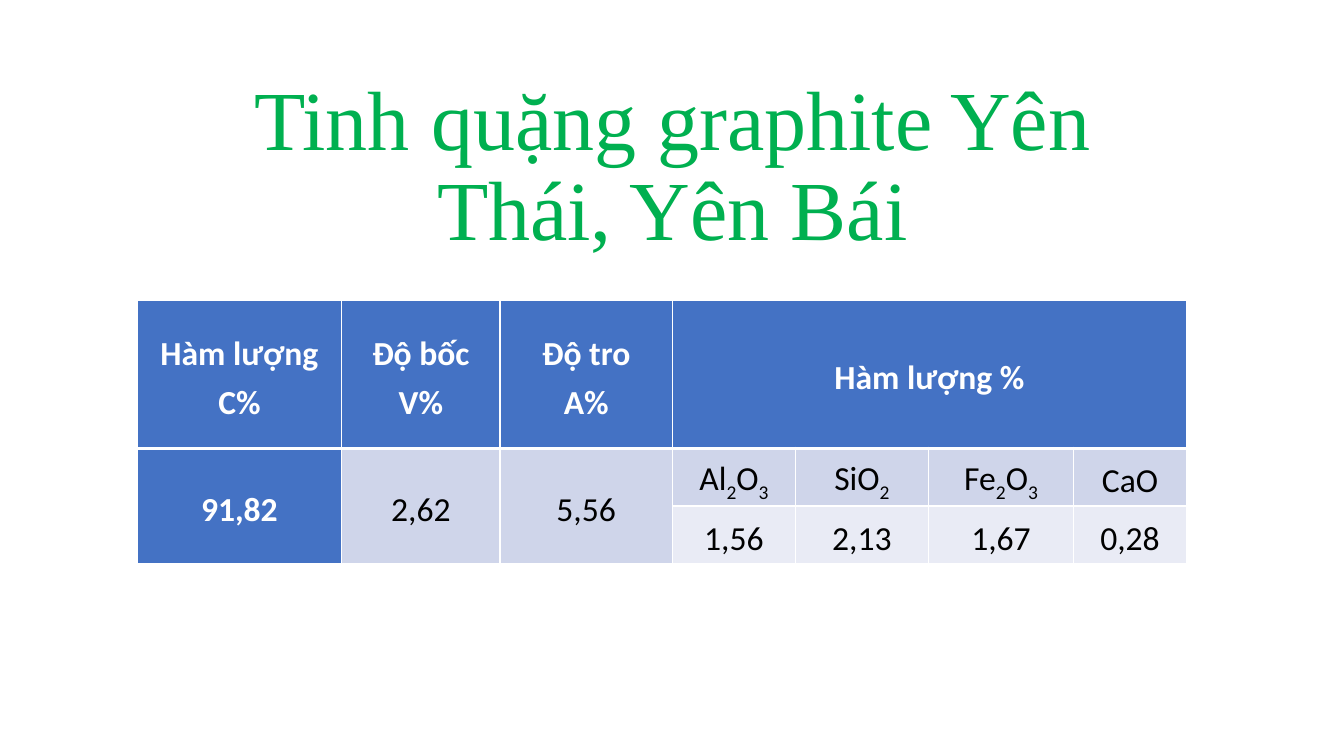
from dataclasses import dataclass
from itertools import groupby

from lxml.etree import SubElement
from pptx import Presentation
from pptx.dml.color import RGBColor
from pptx.enum.text import MSO_ANCHOR, PP_ALIGN
from pptx.oxml.ns import qn
from pptx.util import Inches, Pt


@dataclass(frozen=True)
class Theme:
    """Colours, fonts and type sizes of the slide."""
    title: str = "00B050"
    header: str = "4472C4"
    band: str = "CFD5EA"
    light_band: str = "E9EBF5"
    white: str = "FFFFFF"
    black: str = "000000"
    title_font: str = "Times New Roman"
    body_font: str = "Calibri"
    title_size: int = 60
    body_size: int = 24


class SlideBuilder:
    """Draws styled elements on the current slide."""

    def __init__(self, slide, theme):
        self.slide = slide
        self.theme = theme

    def add_run(self, paragraph, text, font, size, color, bold=False, subscript=False):
        """Add one styled run to a paragraph."""
        run = paragraph.add_run()
        run.text = text
        run.font.name = font
        run.font.size = Pt(size)
        run.font.bold = bold
        run.font.color.rgb = RGBColor.from_string(color)
        if subscript:
            run._r.get_or_add_rPr().set("baseline", "-25000")

    def add_title(self, text, left, top, width, height):
        """Add the centred, bottom-anchored title."""
        frame = self.slide.shapes.add_textbox(
            Inches(left), Inches(top), Inches(width), Inches(height)).text_frame
        frame.word_wrap = True
        frame.vertical_anchor = MSO_ANCHOR.BOTTOM
        heading = frame.paragraphs[0]
        heading.alignment = PP_ALIGN.CENTER
        heading.line_spacing = 0.9
        theme = self.theme
        self.add_run(heading, text, theme.title_font, theme.title_size, theme.title)

    def add_grid(self, left, top, widths, heights):
        """Add an empty table with the given column widths and row heights."""
        grid = self.slide.shapes.add_table(
            len(heights), len(widths), Inches(left), Inches(top),
            Inches(sum(widths)), Inches(sum(heights))).table
        for column, width in zip(grid.columns, widths):
            column.width = Inches(width)
        for row, height in zip(grid.rows, heights):
            row.height = Inches(height)
        return grid

    def style_cell(self, cell, fill, top=1, bottom=1):
        """Give a cell its white borders and its fill."""
        properties = cell._tc.get_or_add_tcPr()
        for side, points in (("L", 1), ("R", 1), ("T", top), ("B", bottom)):
            border = SubElement(properties, qn(f"a:ln{side}"), w=str(Pt(points)))
            paint = SubElement(border, qn("a:solidFill"))
            SubElement(paint, qn("a:srgbClr"), val=self.theme.white)
        cell.fill.solid()
        cell.fill.fore_color.rgb = RGBColor.from_string(fill)

    def fill_cell(self, cell, lines, emphasis=False, formula=False):
        """Write centred lines in a cell, lowering the digits of a formula."""
        theme = self.theme
        cell.vertical_anchor = MSO_ANCHOR.MIDDLE
        cell.margin_left = cell.margin_right = Inches(0.07)
        cell.margin_top = cell.margin_bottom = 0
        color = theme.white if emphasis else theme.black
        frame = cell.text_frame
        for index, line in enumerate(lines.split("\n")):
            paragraph = frame.add_paragraph() if index else frame.paragraphs[0]
            paragraph.alignment = PP_ALIGN.CENTER
            paragraph.line_spacing = 1.2
            parts = groupby(line, str.isdigit) if formula else [(False, line)]
            for lowered, letters in parts:
                self.add_run(paragraph, "".join(letters), theme.body_font,
                             theme.body_size, color, emphasis, lowered)

    def add_composition(self, left, top, widths, heights, headers, measures, oxides):
        """Add the table of measures and oxide contents."""
        theme = self.theme
        grid = self.add_grid(left, top, widths, heights)
        first_oxide = len(measures)
        for column in range(len(widths)):
            lead = column == 0
            self.style_cell(grid.cell(0, column), theme.header, bottom=3)
            self.style_cell(grid.cell(1, column), theme.header if lead else theme.band, top=3)
            self.style_cell(grid.cell(2, column), theme.header if lead else theme.light_band)
        grid.cell(0, first_oxide).merge(grid.cell(0, len(widths) - 1))
        for column, header in enumerate(headers):
            self.fill_cell(grid.cell(0, column), header, emphasis=True)
        for column, measure in enumerate(measures):
            grid.cell(1, column).merge(grid.cell(2, column))
            self.fill_cell(grid.cell(1, column), measure, emphasis=column == 0)
        for column, (oxide, content) in enumerate(oxides, first_oxide):
            self.fill_cell(grid.cell(1, column), oxide, formula=True)
            self.fill_cell(grid.cell(2, column), content)


def main():
    """Build and save the slide."""
    deck = Presentation()
    deck.slide_width, deck.slide_height = Inches(13.33), Inches(7.5)
    builder = SlideBuilder(deck.slides.add_slide(deck.slide_layouts[6]), Theme())
    builder.add_title("Tinh quặng graphite Yên Thái, Yên Bái", 1.67, 0.55, 10, 2.07)
    builder.add_composition(
        1.36, 2.98,
        widths=[2.03, 1.57, 1.71, 1.22, 1.32, 1.44, 1.12],
        heights=[1.47, 0.57, 0.57],
        headers=["Hàm lượng\nC%", "Độ bốc\nV%", "Độ tro\nA%", "Hàm lượng %"],
        measures=["91,82", "2,62", "5,56"],
        oxides=[("Al2O3", "1,56"), ("SiO2", "2,13"), ("Fe2O3", "1,67"), ("CaO", "0,28")])
    deck.save("out.pptx")


if __name__ == "__main__":
    main()
